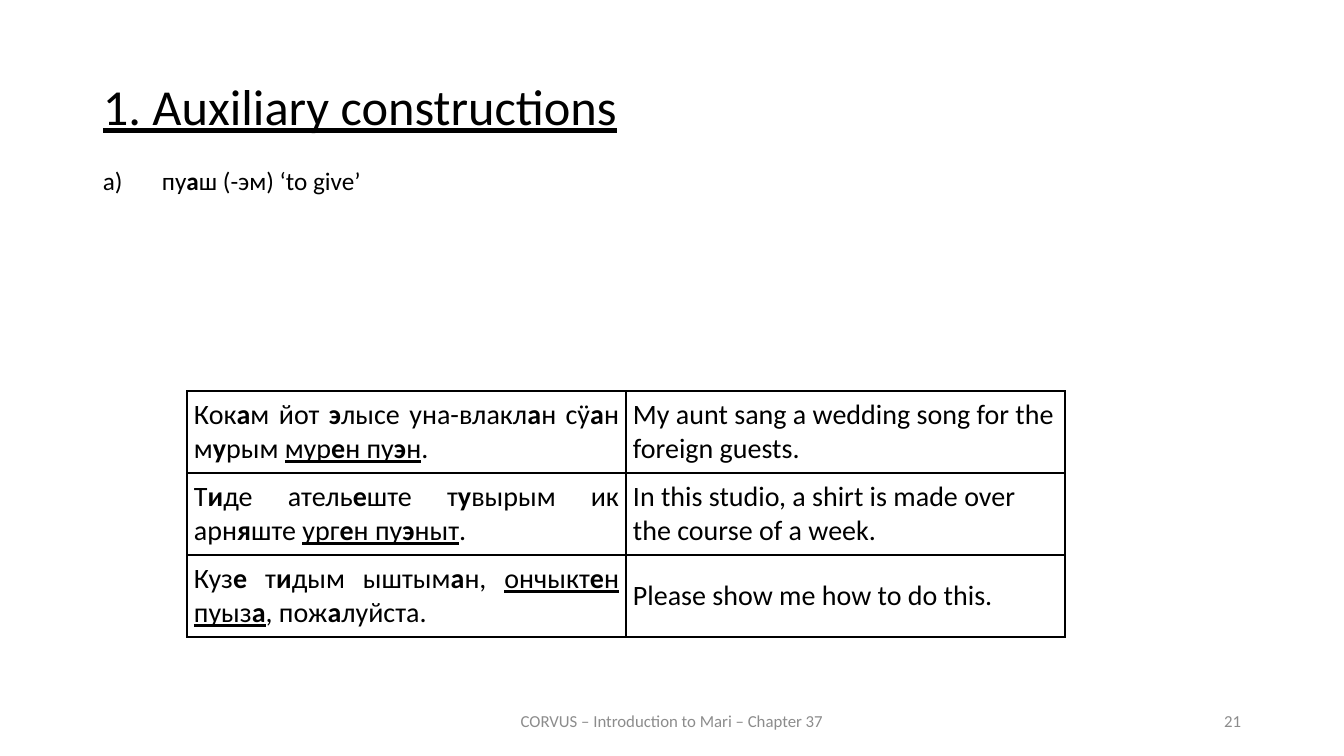
from lxml import etree
from pptx import Presentation
from pptx import util as u
from pptx.dml.color import RGBColor
from pptx.enum import text
from pptx.oxml.ns import qn

# Content: *bold*, _underlined_
TITLE = "_1. Auxiliary constructions_"
POINT = "a)\tпу*а*ш (-эм) ‘to give’"
FOOTER = "CORVUS – Introduction to Mari – Chapter 37"
PAGE = "21"
ROWS = [
    ("Кок*а*м йот *э*лысе уна-влакл*а*н сӱ*а*н м*у*рым _мур*е*н пу*э*н_.",
     "My aunt sang a wedding song for the foreign guests."),
    ("Т*и*де атель*е*ште т*у*вырым ик арн*я*ште _ург*е*н пу*э*ныт_.",
     "In this studio, a shirt is made over the course of a week."),
    ("Куз*е* т*и*дым ыштым*а*н, _ончыкт*е*н пуыз*а*_, пож*а*луйста.",
     "Please show me how to do this."),
]
FONT, BLACK, GREY = "Calibri", "000000", "8C8C8C"
LEFT, MID, RIGHT = text.PP_ALIGN.LEFT, text.PP_ALIGN.CENTER, text.PP_ALIGN.RIGHT
JUST = text.PP_ALIGN.JUSTIFY
CENTRE = text.MSO_ANCHOR.MIDDLE
COL, ROW, TAB = 439, 82, 59


def px(n):
    return u.Emu(round(n * 914400 / 100.8))


def color(code):
    return RGBColor.from_string(code)


def write(para, words, size, code=BLACK, align=LEFT):
    para.alignment = align
    for i, part in enumerate(words.split("_")):
        for j, bit in enumerate(part.split("*")):
            if bit:
                run = para.add_run()
                run.text = bit
                font = run.font
                font.name, font.size = FONT, u.Pt(size)
                font.color.rgb = color(code)
                font.bold, font.underline = j % 2 == 1, i % 2 == 1


def label(box, words, size, code=BLACK, align=LEFT, anchor=text.MSO_ANCHOR.TOP):
    frame = slide.shapes.add_textbox(*map(px, box)).text_frame
    frame.word_wrap = True
    frame.vertical_anchor = anchor
    para = frame.paragraphs[0]
    write(para, words, size, code, align)
    return para


def border(cell):
    props = cell._tc.get_or_add_tcPr()
    for n, side in enumerate(("lnL", "lnR", "lnT", "lnB")):
        line = etree.Element(qn("a:" + side), w=str(u.Pt(1)))
        fill = etree.SubElement(line, qn("a:solidFill"))
        etree.SubElement(fill, qn("a:srgbClr"), val=BLACK)
        props.insert(n, line)


deck = Presentation()
deck.slide_width, deck.slide_height = px(1344), px(756)
slide = deck.slides.add_slide(deck.slide_layouts[6])

# Title and point
head = label((93, 77, 1159, 84), TITLE, 36, align=JUST)
head.line_spacing = 0.9
point = label((93, 160, 1117, 40), POINT, 18)
tabs = etree.SubElement(point._p.get_or_add_pPr(), qn("a:tabLst"))
etree.SubElement(tabs, qn("a:tab"), pos=str(px(TAB)), algn="l")

# Example sentences
grid = slide.shapes.add_table(len(ROWS), 2, px(187), px(391),
                              px(2 * COL), px(len(ROWS) * ROW)).table
for col in grid.columns:
    col.width = px(COL)
for r, pair in enumerate(ROWS):
    grid.rows[r].height = px(ROW)
    for c, words in enumerate(pair):
        cell = grid.cell(r, c)
        cell.fill.background()
        cell.vertical_anchor = CENTRE
        cell.margin_left = cell.margin_right = px(7)
        cell.margin_top = cell.margin_bottom = 0
        write(cell.text_frame.paragraphs[0], words, 20, align=(JUST, LEFT)[c])
        border(cell)

# Footer
label((445, 701, 454, 40), FOOTER, 12, GREY, MID, CENTRE)
label((949, 701, 302, 40), PAGE, 12, GREY, RIGHT, CENTRE)

deck.save("out.pptx")
